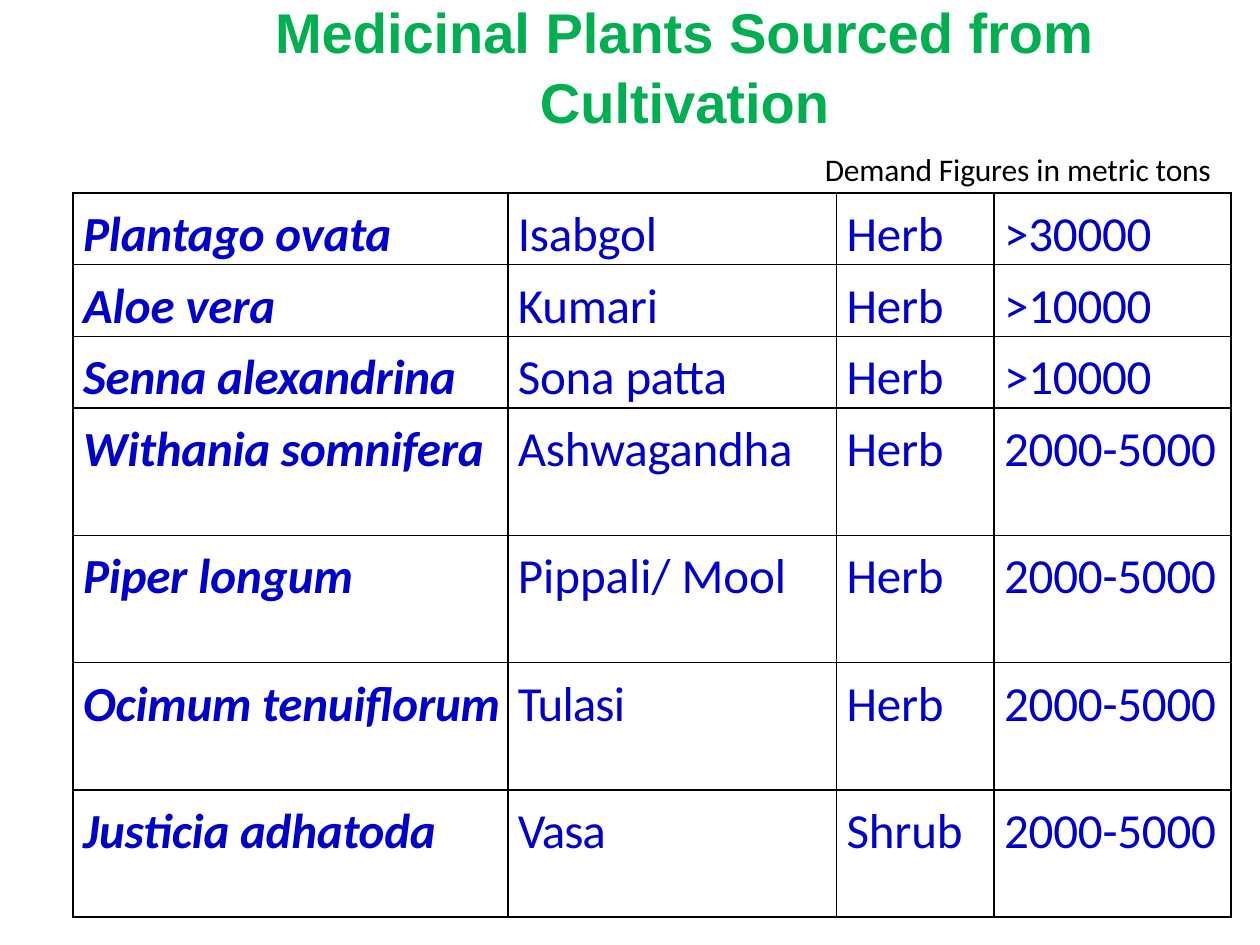
from pptx import Presentation
from pptx.dml.color import RGBColor
from pptx.enum.text import MSO_ANCHOR, MSO_AUTO_SIZE, PP_ALIGN
from pptx.oxml import parse_xml
from pptx.oxml.ns import nsdecls
from pptx.util import Inches, Pt

GREEN = RGBColor(0x00, 0xB0, 0x50)
BLUE = RGBColor(0x00, 0x00, 0xCC)
BLACK = RGBColor(0x00, 0x00, 0x00)
CENTER, RIGHT = PP_ALIGN.CENTER, PP_ALIGN.RIGHT
MIDDLE, GROW = MSO_ANCHOR.MIDDLE, MSO_AUTO_SIZE.SHAPE_TO_FIT_TEXT

TIGHT = -0.1  # usual letter spacing in points
COLUMN_WIDTHS = [3.45, 2.61, 1.25, 1.88]
ROW_HEIGHTS = [0.57] * 3 + [1.01] * 4

# Each cell is a list of (text, letter spacing) runs
PLANTS = [
    ([("Plantago ovata", TIGHT)], [("Isabgol", TIGHT)], "Herb", ">30000"),
    ([("Aloe ", 0), ("vera", TIGHT)], [("Kumari", TIGHT)], "Herb", ">10000"),
    ([("Senna alexandrina", TIGHT)], [("Sona ", TIGHT), ("patta", -0.3)], "Herb", ">10000"),
    ([("Withania somnifera", TIGHT)], [("Ashwagandha", TIGHT)], "Herb", "2000-5000"),
    ([("Piper ", TIGHT), ("longum", 0)], [("Pippali/ Mool", 0)], "Herb", "2000-5000"),
    ([("Ocimum tenuiflorum", TIGHT)], [("Tulasi", -0.5)], "Herb", "2000-5000"),
    ([("Justicia adhatoda", TIGHT)], [("Vasa", -0.6)], "Shrub", "2000-5000"),
]


class SlideBuilder:
    def __init__(self, prs):
        self.s = prs.slides.add_slide(prs.slide_layouts[5])

    def run(self, p, text, size, color, font="Calibri", bold=False, italic=False, spacing=0):
        r = p.add_run()
        r.text = text
        f = r.font
        f.name, f.size, f.bold, f.italic = font, Pt(size), bold, italic
        f.color.rgb = color
        if spacing:
            r._r.get_or_add_rPr().set("spc", str(round(spacing * 100)))

    def border(self, cell):
        tcPr = cell._tc.get_or_add_tcPr()
        for i, side in enumerate(("lnL", "lnR", "lnT", "lnB")):
            tcPr.insert(i, parse_xml(
                f'<a:{side} {nsdecls("a")} w="12700"><a:solidFill>'
                f'<a:srgbClr val="{BLACK}"/></a:solidFill></a:{side}>'))

    def cell(self, cell, runs, emphasis):
        cell.fill.background()
        cell.margin_left = cell.margin_right = cell.margin_top = cell.margin_bottom = 0
        self.border(cell)
        p = cell.text_frame.paragraphs[0]
        p.line_spacing = Pt(41)
        p._p.get_or_add_pPr().set("marL", str(Inches(0.08)))
        for text, spacing in runs:
            self.run(p, text, 28, BLUE, bold=emphasis, italic=emphasis, spacing=spacing)

    def table(self, left, top, rows):
        frame = self.s.shapes.add_table(
            len(rows), len(COLUMN_WIDTHS), Inches(left), Inches(top),
            Inches(sum(COLUMN_WIDTHS)), Inches(sum(ROW_HEIGHTS)))
        table = frame.table
        table.first_row = table.horz_banding = False
        for column, width in zip(table.columns, COLUMN_WIDTHS):
            column.width = Inches(width)
        for row, height, (name, local, kind, demand) in zip(table.rows, ROW_HEIGHTS, rows):
            row.height = Inches(height)
            contents = (name, local, [(kind, TIGHT)], [(demand, TIGHT)])
            for i, (cell, runs) in enumerate(zip(row.cells, contents)):
                self.cell(cell, runs, emphasis=i == 0)

    def title(self, left, top, width, height, heading, note):
        sp = self.s.shapes.title
        sp.left, sp.top, sp.width, sp.height = map(Inches, (left, top, width, height))
        tf = sp.text_frame
        tf.word_wrap, tf.auto_size, tf.vertical_anchor = True, GROW, MIDDLE
        tf.margin_left = tf.margin_right = tf.margin_bottom = 0
        tf.margin_top = Inches(0.25)
        # Heading
        p = tf.paragraphs[0]
        p.alignment, p.space_before, p.line_spacing = CENTER, Pt(17.9), 1.04
        self.run(p, heading, 32, GREEN, font="Arial", bold=True)
        # Unit note below the heading
        p = tf.add_paragraph()
        p.alignment, p.space_before = RIGHT, Pt(8.4)
        for text, spacing in note:
            self.run(p, text, 18, BLACK, spacing=spacing)
        # Keep the title in front of the table
        sp.element.getparent().append(sp.element)


def main():
    prs = Presentation()
    prs.slide_width, prs.slide_height = Inches(10), Inches(7.5)
    slide = SlideBuilder(prs)
    slide.table(0.58, 1.53, PLANTS)
    slide.title(1.26, -0.27, 8.35, 1.74, "Medicinal Plants Sourced from Cultivation",
                [("Demand Figures ", TIGHT), ("in ", 0), ("metric tons", TIGHT)])
    prs.save("out.pptx")


if __name__ == "__main__":
    main()
